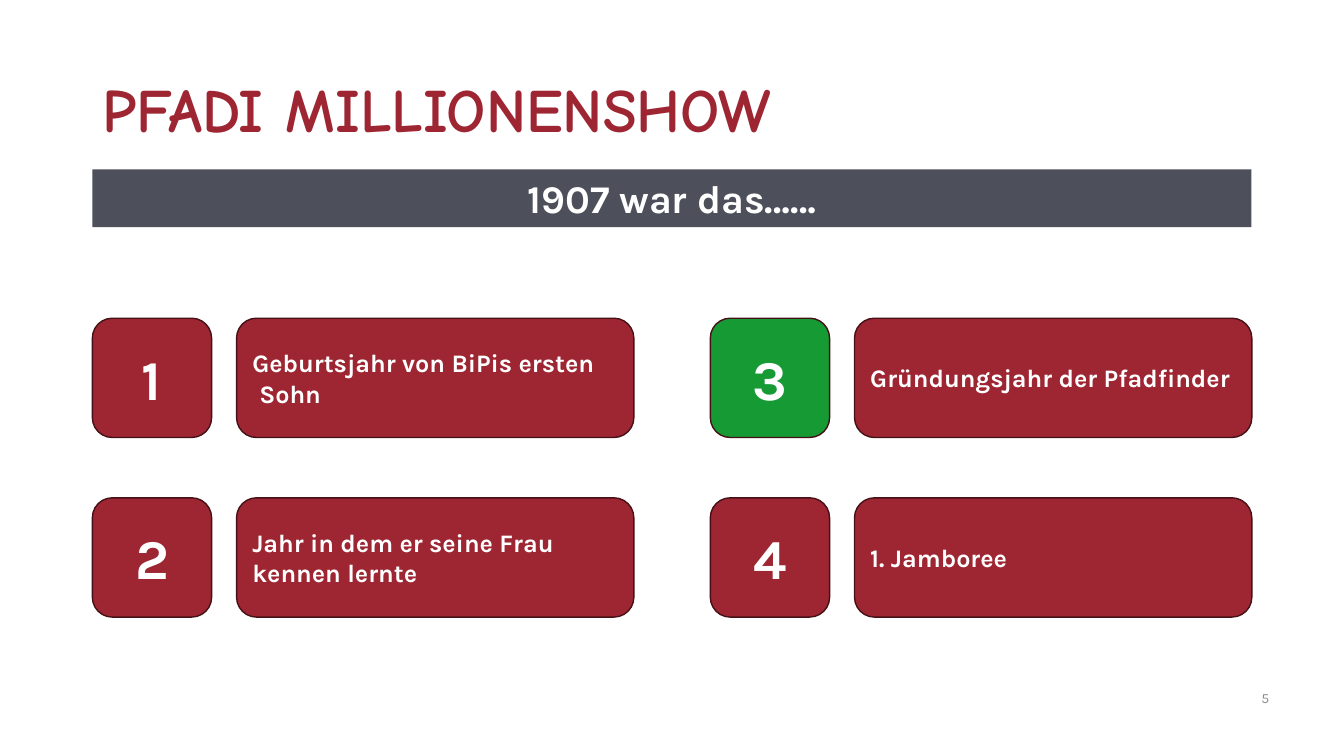
import pptx
import pptx.dml.color
import pptx.enum.shapes
import pptx.enum.text
import pptx.util

Pt = pptx.util.Pt
ALIGN = pptx.enum.text.PP_ALIGN
ANCHOR = pptx.enum.text.MSO_ANCHOR
SHAPE = pptx.enum.shapes.MSO_SHAPE
COLORS = {
    "red": "9D2632",
    "dark_red": "451116",
    "green": "159A34",
    "slate": "4D4F5A",
    "gray": "8C8C8C",
    "white": "FFFFFF",
}


def rgb(name):
    return pptx.dml.color.RGBColor.from_string(COLORS[name])


def write(shape, lines, size, color="white", font="Karla", bold=True,
          align=ALIGN.LEFT, anchor=ANCHOR.MIDDLE):
    """Fill a shape with one paragraph per line and return the paragraphs."""
    frame = shape.text_frame
    frame.word_wrap = True
    frame.vertical_anchor = anchor
    for index, line in enumerate(lines):
        paragraph = frame.add_paragraph() if index else frame.paragraphs[0]
        paragraph.alignment = align
        run = paragraph.add_run()
        run.text = line
        run.font.name = font
        run.font.size = Pt(size)
        run.font.bold = bold
        run.font.color.rgb = rgb(color)
    return frame.paragraphs


presentation = pptx.Presentation()
presentation.slide_width = Pt(960)
presentation.slide_height = Pt(540)
slide = presentation.slides.add_slide(presentation.slide_layouts[6])
shapes = slide.shapes

# Title, page number and question
title = shapes.add_textbox(Pt(66), Pt(28), Pt(828), Pt(104.4))
write(title, ["PFADI MILLIONENSHOW"], 44, "red", "Comic Neue")[0].line_spacing = 0.9

page_number = shapes.add_textbox(Pt(894), Pt(484), Pt(66), Pt(28.8))
write(page_number, ["5"], 10, "gray", bold=False)

question = shapes.add_shape(SHAPE.RECTANGLE, Pt(66), Pt(121), Pt(828), Pt(41.2))
question.shadow.inherit = False
question.fill.solid()
question.fill.fore_color.rgb = rgb("slate")
question.line.fill.background()
write(question, ["1907 war das……"], 28, align=ALIGN.CENTER, anchor=ANCHOR.TOP)

# Answers run down the left column, then down the right one
answers = [
    ["Geburtsjahr von BiPis ersten", "Sohn"],
    ["Jahr in dem er seine Frau", "kennen lernte"],
    ["Gründungsjahr der Pfadfinder"],
    ["1. Jamboree"],
]
correct_number = 3
tile_height = 85.2
answer_offset = 103
answer_width = 283.8

for index, lines in enumerate(answers):
    number = index + 1
    column, row = divmod(index, 2)
    left = 66 + column * 441.4
    top = 227.3 + row * 128.3
    tile_color = "green" if number == correct_number else "red"
    tiles = [
        (left, tile_height, tile_color, [str(number)], 40, ALIGN.CENTER),
        (left + answer_offset, answer_width, "red", lines, 18, ALIGN.LEFT),
    ]
    for x, width, fill, text, size, align in tiles:
        tile = shapes.add_shape(
            SHAPE.ROUNDED_RECTANGLE, Pt(x), Pt(top), Pt(width), Pt(tile_height))
        tile.shadow.inherit = False
        tile.fill.solid()
        tile.fill.fore_color.rgb = rgb(fill)
        tile.line.color.rgb = rgb("dark_red")
        tile.line.width = Pt(1)
        paragraphs = write(tile, text, size, align=align)
        if text[-1] == "Sohn":
            paragraphs[-1]._p.get_or_add_pPr().set("marL", str(Pt(5)))

presentation.save("out.pptx")
